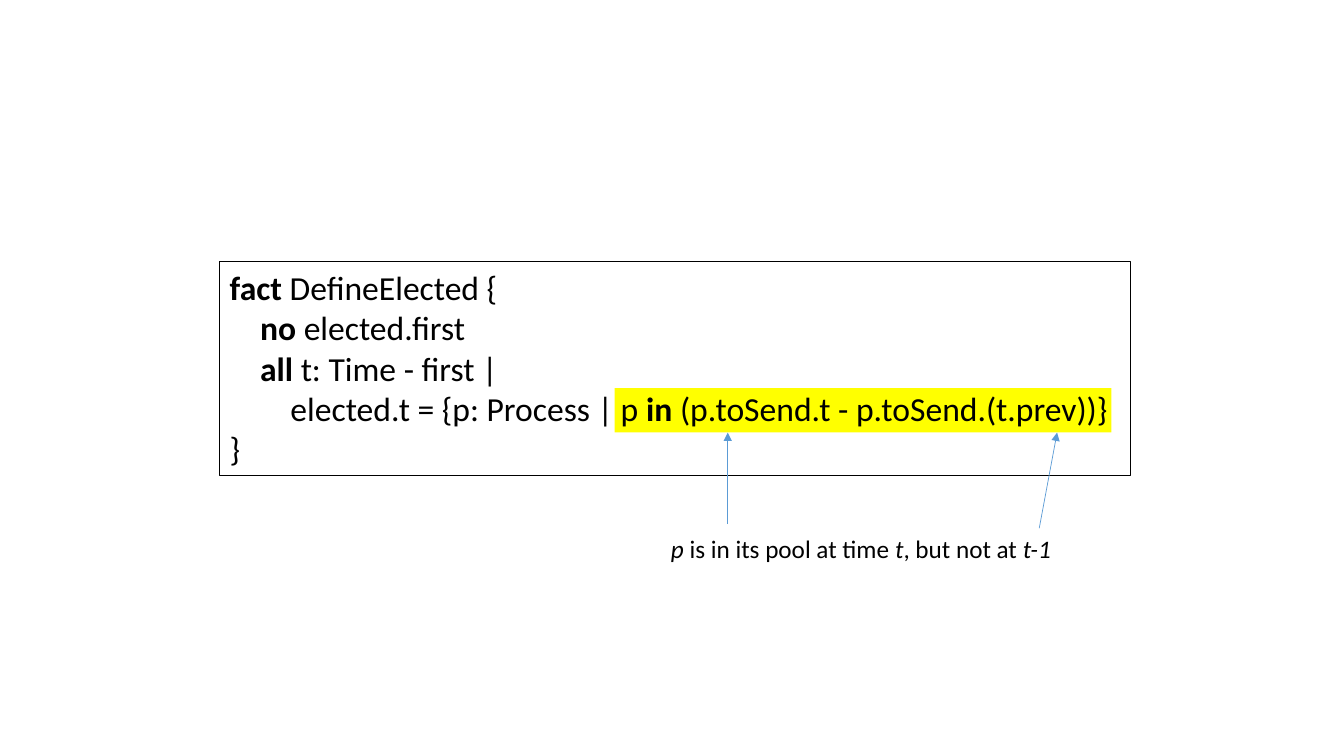
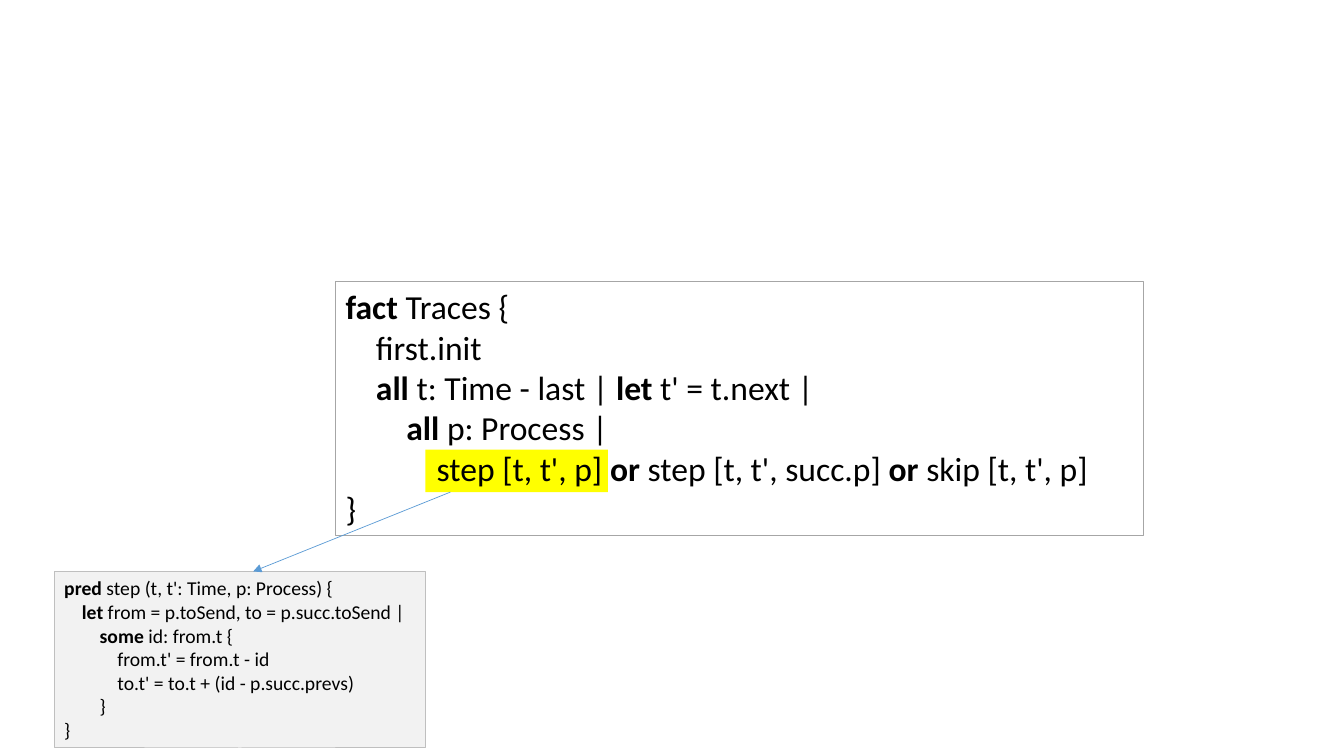
from dataclasses import dataclass
from typing import Optional

import pptx
import pptx.dml.color
import pptx.enum.shapes
import pptx.enum.text
import pptx.oxml.ns
import pptx.presentation
import pptx.shapes.autoshape
import pptx.slide
import pptx.text.text
import pptx.util
from lxml import etree

Cm = pptx.util.Cm
Pt = pptx.util.Pt
RGBColor = pptx.dml.color.RGBColor
qn = pptx.oxml.ns.qn

BLACK = RGBColor(0x00, 0x00, 0x00)
YELLOW = RGBColor(0xFF, 0xFF, 0x00)
BLUE = RGBColor(0x5B, 0x9B, 0xD5)
GREY = RGBColor(0xA6, 0xA6, 0xA6)
SILVER = RGBColor(0xBF, 0xBF, 0xBF)
PALE_GREY = RGBColor(0xF2, 0xF2, 0xF2)

FONT = "Calibri"
EMPHASIS_MARK = "*"
INDENT_EM = 0.904


@dataclass(frozen=True)
class Box:
    left: float
    top: float
    width: float
    height: float


@dataclass(frozen=True)
class CodeLine:
    level: int
    text: str


@dataclass(frozen=True)
class Listing:
    box: Box
    lines: tuple[CodeLine, ...]
    border: RGBColor
    fill: Optional[RGBColor] = None
    size: int = 24


@dataclass(frozen=True)
class Arrow:
    start: tuple[float, float]
    end: tuple[float, float]


@dataclass(frozen=True)
class Caption:
    box: Box
    text: str
    size: int = 18


@dataclass(frozen=True)
class CodeSlide:
    highlight: Box
    listings: tuple[Listing, ...]
    arrows: tuple[Arrow, ...]
    captions: tuple[Caption, ...] = ()


ELECTED = CodeSlide(
    highlight=Box(15.49, 9.78, 12.52, 1.12),
    listings=(
        Listing(
            Box(5.54, 6.6, 22.96, 5.38),
            (
                CodeLine(0, "*fact* DefineElected {"),
                CodeLine(1, "*no* elected.first"),
                CodeLine(1, "*all* t: Time - first |"),
                CodeLine(2, "elected.t = {p: Process | p *in* (p.toSend.t - p.toSend.(t.prev))}"),
                CodeLine(0, "}"),
            ),
            border=BLACK,
        ),
    ),
    arrows=(
        Arrow((18.34, 13.21), (18.34, 10.9)),
        Arrow((26.19, 13.31), (26.64, 10.9)),
    ),
    captions=(
        Caption(
            Box(16.66, 13.31, 10.24, 1.02),
            "*p* is in its pool at time *t*, but not at *t-1*",
        ),
    ),
)

TRACES = CodeSlide(
    highlight=Box(10.72, 11.33, 4.6, 1.07),
    listings=(
        Listing(
            Box(8.46, 7.09, 20.35, 6.4),
            (
                CodeLine(0, "*fact* Traces {"),
                CodeLine(1, "first.init"),
                CodeLine(1, "*all* t: Time - last | *let* t' = t.next |"),
                CodeLine(2, "*all* p: Process |"),
                CodeLine(3, "step [t, t', p] *or* step [t, t', succ.p] *or* skip [t, t', p]"),
                CodeLine(0, "}"),
            ),
            border=GREY,
        ),
        Listing(
            Box(1.37, 14.4, 9.35, 4.45),
            (
                CodeLine(0, "*pred* step (t, t': Time, p: Process) {"),
                CodeLine(1, "*let* from = p.toSend, to = p.succ.toSend |"),
                CodeLine(2, "*some* id: from.t {"),
                CodeLine(3, "from.t' = from.t - id"),
                CodeLine(3, "to.t' = to.t + (id - p.succ.prevs)"),
                CodeLine(2, "}"),
                CodeLine(0, "}"),
            ),
            border=SILVER,
            fill=PALE_GREY,
            size=14,
        ),
    ),
    arrows=(Arrow((11.35, 12.4), (6.38, 14.4)),),
)


def lengths(box: Box) -> tuple[Cm, Cm, Cm, Cm]:
    return Cm(box.left), Cm(box.top), Cm(box.width), Cm(box.height)


def add_rectangle(
    slide: pptx.slide.Slide,
    box: Box,
    fill: Optional[RGBColor] = None,
    border: Optional[RGBColor] = None,
) -> pptx.shapes.autoshape.Shape:
    rectangle = slide.shapes.add_shape(
        pptx.enum.shapes.MSO_SHAPE.RECTANGLE, *lengths(box)
    )
    rectangle.shadow.inherit = False
    if fill is None:
        rectangle.fill.background()
    else:
        rectangle.fill.solid()
        rectangle.fill.fore_color.rgb = fill
    if border is None:
        rectangle.line.fill.background()
    else:
        rectangle.line.color.rgb = border
        rectangle.line.width = Pt(0.75)
    return rectangle


def add_runs(
    paragraph: pptx.text.text._Paragraph, marked: str, size: int, emphasis: str
) -> None:
    paragraph.alignment = pptx.enum.text.PP_ALIGN.LEFT
    for position, words in enumerate(marked.split(EMPHASIS_MARK)):
        if words:
            run = paragraph.add_run()
            run.text = words
            run.font.name = FONT
            run.font.size = Pt(size)
            run.font.color.rgb = BLACK
            setattr(run.font, emphasis, position % 2 == 1)


def add_listing(slide: pptx.slide.Slide, listing: Listing) -> None:
    frame = add_rectangle(slide, listing.box, listing.fill, listing.border).text_frame
    frame.word_wrap = True
    frame.auto_size = pptx.enum.text.MSO_AUTO_SIZE.SHAPE_TO_FIT_TEXT
    frame.vertical_anchor = pptx.enum.text.MSO_ANCHOR.TOP
    for number, line in enumerate(listing.lines):
        paragraph = frame.add_paragraph() if number else frame.paragraphs[0]
        add_runs(paragraph, line.text, listing.size, "bold")
        indent = Pt(line.level * INDENT_EM * listing.size)
        properties = paragraph._p.get_or_add_pPr()
        properties.set("marL", str(int(indent)))
        properties.set("indent", "0")


def add_caption(slide: pptx.slide.Slide, caption: Caption) -> None:
    frame = slide.shapes.add_textbox(*lengths(caption.box)).text_frame
    frame.word_wrap = False
    frame.auto_size = pptx.enum.text.MSO_AUTO_SIZE.SHAPE_TO_FIT_TEXT
    add_runs(frame.paragraphs[0], caption.text, caption.size, "italic")


def add_arrow(slide: pptx.slide.Slide, arrow: Arrow) -> None:
    pointer = slide.shapes.add_connector(
        pptx.enum.shapes.MSO_CONNECTOR.STRAIGHT,
        *(Cm(length) for length in arrow.start + arrow.end),
    )
    pointer.line.color.rgb = BLUE
    pointer.line.width = Pt(0.5)
    etree.SubElement(pointer.line._get_or_add_ln(), qn("a:tailEnd"), type="triangle")
    etree.SubElement(pointer._element.spPr, qn("a:effectLst"))


def add_code_slide(
    deck: pptx.presentation.Presentation, content: CodeSlide
) -> None:
    slide = deck.slides.add_slide(deck.slide_layouts[6])
    add_rectangle(slide, content.highlight, fill=YELLOW)
    for listing in content.listings:
        add_listing(slide, listing)
    for caption in content.captions:
        add_caption(slide, caption)
    for arrow in content.arrows:
        add_arrow(slide, arrow)


def main() -> None:
    deck = pptx.Presentation()
    deck.slide_width = Cm(33.87)
    deck.slide_height = Cm(19.05)
    for content in (ELECTED, TRACES):
        add_code_slide(deck, content)
    deck.save("out.pptx")


if __name__ == "__main__":
    main()
